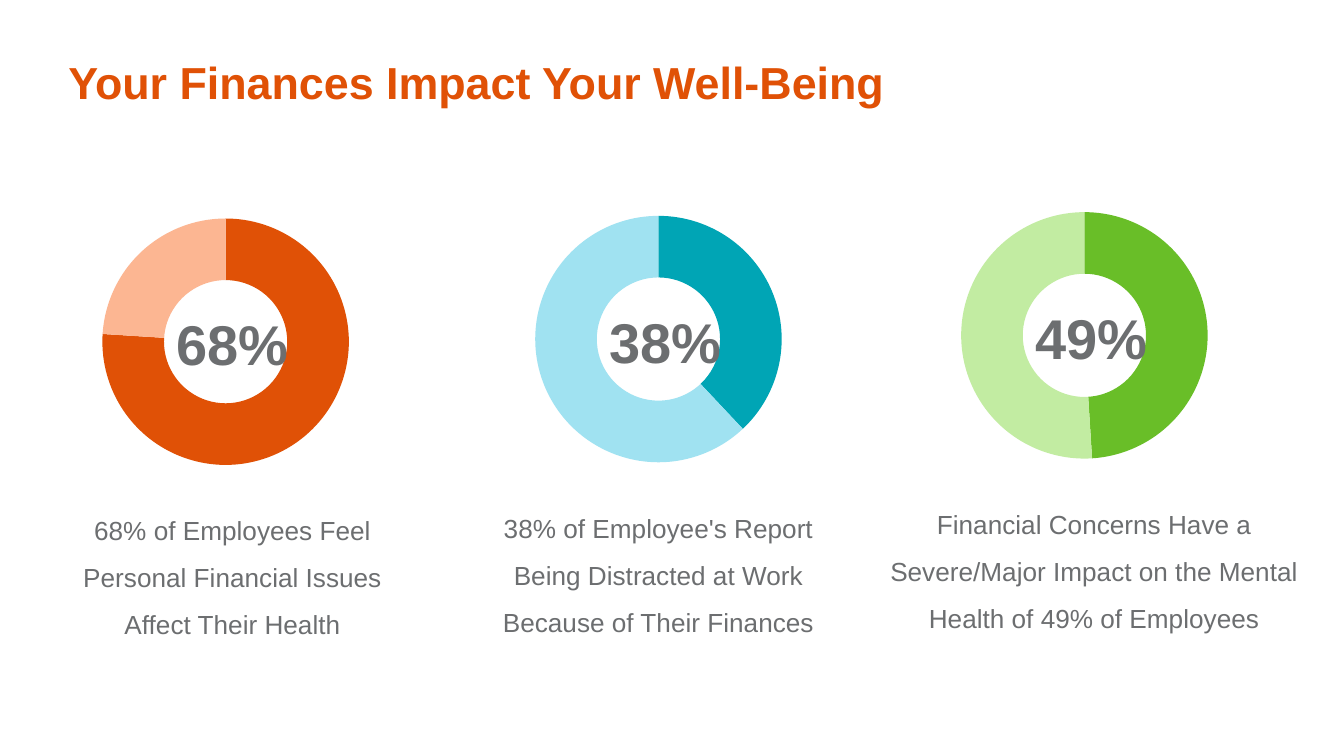
from pptx import Presentation
from pptx.chart.data import CategoryChartData
from pptx.dml.color import RGBColor
from pptx.enum.chart import XL_CHART_TYPE
from pptx.enum.text import MSO_ANCHOR, MSO_AUTO_SIZE, PP_ALIGN
from pptx.util import Cm, Pt

DOUGHNUT = XL_CHART_TYPE.DOUGHNUT
CENTER, LEFT = PP_ALIGN.CENTER, PP_ALIGN.LEFT
TOP, BOTTOM = MSO_ANCHOR.TOP, MSO_ANCHOR.BOTTOM
NO_AUTO_SIZE = MSO_AUTO_SIZE.NONE

TITLE_ONLY_LAYOUT = 5
FONT = "Arial"
COLORS = {
    "orange": "E05106", "light orange": "FCB692",
    "teal": "00A5B5", "light teal": "A0E2F1",
    "green": "69BE28", "light green": "C2ECA2",
    "gray": "6C6E70", "black": "000000",
}

# Sizes and offsets in centimetres, shared by the three columns
CHART_WIDTH, CHART_HEIGHT = 8.03, 5.36
PERCENT_WIDTH, PERCENT_HEIGHT = 2.69, 1.55
PERCENT_OFFSET_X, PERCENT_OFFSET_Y = 2.8, 1.92
CAPTION_HEIGHT, CAPTION_OFFSET_Y = 2.84, 5.53

# Chart left and top, values, hue, percent, caption left and width, caption
COLUMNS = [
    (0.25, 3.78, (76, 24, None), "orange", "68%", 1.17, 6.45,
     "68% of Employees Feel Personal Financial Issues Affect Their Health"),
    (8.43, 3.73, (38, 62, None), "teal", "38%", 9.22, 6.45,
     "38% of Employee's Report Being Distracted at Work Because of Their Finances"),
    (16.48, 3.66, (49, 51, None), "green", "49%", 16.31, 8.74,
     "Financial Concerns Have a Severe/Major Impact on the Mental Health of 49% of Employees"),
]


def color(name):
    return RGBColor.from_string(COLORS[name])


def format_font(font, size, color_name, bold=False):
    font.name = FONT
    font.size = Pt(size)
    font.bold = bold
    font.color.rgb = color(color_name)


def add_title(slide, text):
    title = slide.shapes.title
    title.left, title.top, title.width, title.height = Cm(1.04), Cm(0.79), Cm(18.44), Cm(1.02)
    frame = title.text_frame
    frame.text = text
    frame.auto_size = NO_AUTO_SIZE
    frame.vertical_anchor = TOP
    frame.margin_top = Cm(0.25)
    paragraph = frame.paragraphs[0]
    paragraph.alignment = LEFT
    format_font(paragraph.font, 24, "orange", bold=True)


def add_text(slide, text, left, top, width, height, size, bold=False,
             line_spacing=1.0, anchor=TOP):
    box = slide.shapes.add_textbox(Cm(left), Cm(top), Cm(width), Cm(height))
    frame = box.text_frame
    frame.word_wrap = True
    frame.vertical_anchor = anchor
    frame.text = text
    paragraph = frame.paragraphs[0]
    paragraph.alignment = CENTER
    paragraph.line_spacing = line_spacing
    format_font(paragraph.font, size, "gray", bold)


def add_doughnut(slide, left, top, values, hue):
    data = CategoryChartData()
    data.categories = ["1", "2", "3"]
    data.add_series("Series 1", values)
    chart = slide.shapes.add_chart(
        DOUGHNUT, Cm(left), Cm(top), Cm(CHART_WIDTH), Cm(CHART_HEIGHT), data).chart
    chart.has_title = False
    chart.has_legend = False
    format_font(chart.font, 18, "black")
    plot = chart.plots[0]
    plot.vary_by_categories = True
    for hole in chart.element.xpath(".//c:holeSize"):
        hole.set("val", "75")
    for index, name in enumerate((hue, f"light {hue}", hue)):
        point_format = plot.series[0].points[index].format
        point_format.fill.solid()
        point_format.fill.fore_color.rgb = color(name)
        point_format.line.fill.background()


def main():
    presentation = Presentation()
    presentation.slide_width, presentation.slide_height = Cm(25.4), Cm(14.29)
    slide = presentation.slides.add_slide(presentation.slide_layouts[TITLE_ONLY_LAYOUT])

    add_title(slide, "Your Finances Impact Your Well-Being")

    # Each column: doughnut, percent in its hole, caption below
    for left, top, values, hue, percent, caption_left, caption_width, caption in COLUMNS:
        add_doughnut(slide, left, top, values, hue)
        add_text(slide, percent, left + PERCENT_OFFSET_X, top + PERCENT_OFFSET_Y,
                 PERCENT_WIDTH, PERCENT_HEIGHT, 30, bold=True, anchor=BOTTOM)
        add_text(slide, caption, caption_left, top + CAPTION_OFFSET_Y,
                 caption_width, CAPTION_HEIGHT, 14, line_spacing=1.5)

    presentation.save("out.pptx")


if __name__ == "__main__":
    main()
